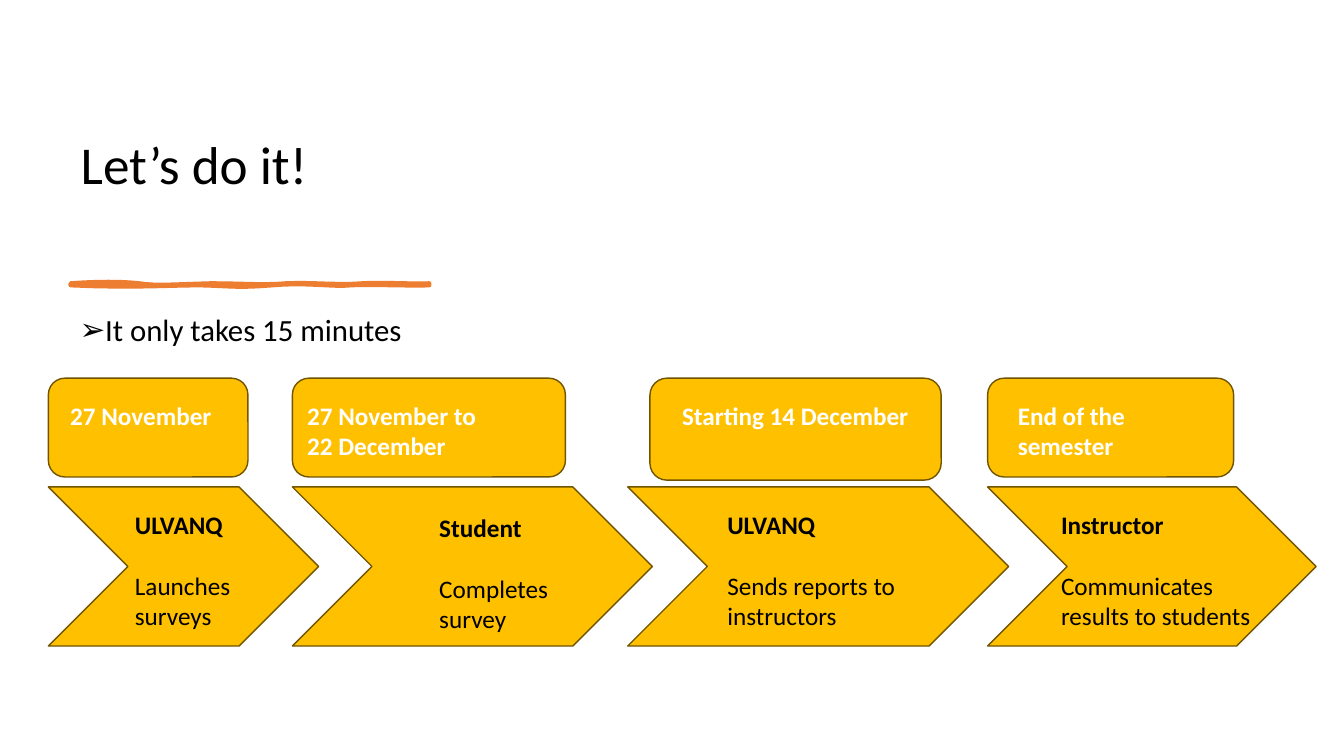
"""Build the survey timeline slide."""
from dataclasses import dataclass

from lxml.etree import SubElement
from pptx import Presentation
from pptx.dml.color import RGBColor
from pptx.enum.shapes import MSO_SHAPE
from pptx.enum.text import MSO_ANCHOR, MSO_AUTO_SIZE, PP_ALIGN
from pptx.oxml.ns import qn
from pptx.shapes.autoshape import Shape
from pptx.slide import Slide
from pptx.text.text import TextFrame, _Paragraph
from pptx.util import Cm, Pt

HUES = {"gold": "FFC000", "edge": "705400", "brush": "ED7D31",
        "ink": "000000", "white": "FFFFFF"}
FONT = "Calibri"
START = (1.78, 7.14)
CURVES = [
    (2.46, 7.09, 3.07, 7.09, 3.51, 7.14),
    (3.94, 7.21, 4.5, 7.16, 5.31, 7.14),
    (6.12, 7.14, 6.6, 7.19, 7.21, 7.14),
    (7.82, 7.11, 8.61, 7.19, 9.12, 7.14),
    (9.63, 7.11, 10.46, 7.16, 10.82, 7.14),
    (10.82, 7.16, 10.82, 7.19, 10.82, 7.19),
    (10.36, 7.21, 9.25, 7.16, 8.84, 7.19),
    (8.43, 7.24, 7.72, 7.11, 6.86, 7.19),
    (5.97, 7.26, 5.87, 7.21, 5.05, 7.19),
    (4.22, 7.19, 3.35, 7.26, 1.78, 7.19),
]


@dataclass
class Box:
    """Hold a box in centimetres."""
    left: float
    top: float
    width: float
    height: float

    def emu(self) -> tuple[Cm, Cm, Cm, Cm]:
        """Return the box as lengths."""
        return Cm(self.left), Cm(self.top), Cm(self.width), Cm(self.height)


@dataclass
class Stage:
    """Describe one step of the timeline."""
    date: str
    who: str
    task: str
    card: Box
    label: Box
    arrow: Box
    note: Box


STAGES = [
    Stage("27 November", "ULVANQ", "Launches\nsurveys",
          Box(1.22, 9.53, 5.03, 2.49), Box(1.52, 9.96, 4.67, 1.02),
          Box(1.22, 12.27, 6.81, 4.01), Box(3.15, 12.7, 4.06, 3.33)),
    Stage("27 November to\n22 December", "Student", "Completes\nsurvey",
          Box(7.37, 9.53, 6.88, 2.49), Box(7.49, 9.96, 6.4, 1.8),
          Box(7.37, 12.27, 9.07, 4.01), Box(10.82, 12.78, 5.56, 3.33)),
    Stage("Starting 14 December", "ULVANQ", "Sends reports to instructors",
          Box(16.38, 9.53, 7.34, 2.57), Box(16.94, 9.96, 6.45, 1.02),
          Box(15.82, 12.27, 9.6, 4.01), Box(18.08, 12.7, 6.15, 3.33)),
    Stage("End of the semester", "Instructor",
          "Communicates results to students",
          Box(24.89, 9.53, 6.2, 2.49), Box(25.4, 9.96, 5.46, 1.8),
          Box(24.89, 12.27, 8.28, 4.01), Box(26.49, 12.7, 5.61, 3.33)),
]


def tint(name: str) -> RGBColor:
    """Return a named colour."""
    return RGBColor.from_string(HUES[name])


def write(para: _Paragraph, text: str, size: float, hue: str = "ink",
          bold: bool = False) -> None:
    """Add text run by run, breaking at newlines."""
    for i, line in enumerate(text.split("\n")):
        if i:
            para.add_line_break()
        run = para.add_run()
        run.text = line
        run.font.name = FONT
        run.font.size = Pt(size)
        run.font.bold = bold
        run.font.color.rgb = tint(hue)


def paint(shape: Shape, fill: str, edge: str, width: float) -> None:
    """Set fill and line, and drop the shadow."""
    shape.shadow.inherit = False
    shape.fill.solid()
    shape.fill.fore_color.rgb = tint(fill)
    shape.line.color.rgb = tint(edge)
    shape.line.width = Pt(width)


def block(slide: Slide, kind: MSO_SHAPE, box: Box) -> None:
    """Draw one gold preset shape."""
    shape = slide.shapes.add_shape(kind, *box.emu())
    paint(shape, "gold", "edge", 1)


def frame(slide: Slide, box: Box) -> TextFrame:
    """Add a wrapping text box."""
    text = slide.shapes.add_textbox(*box.emu()).text_frame
    text.word_wrap = True
    return text


def holder(shape: Shape, box: Box, anchor: MSO_ANCHOR) -> _Paragraph:
    """Place and format a placeholder, and return its paragraph."""
    shape.left, shape.top, shape.width, shape.height = box.emu()
    text = shape.text_frame
    text.word_wrap = True
    text.auto_size = MSO_AUTO_SIZE.NONE
    text.vertical_anchor = anchor
    para = text.paragraphs[0]
    para.alignment = PP_ALIGN.LEFT
    para.line_spacing = 0.9
    para.space_before = Pt(0)
    return para


def brush(slide: Slide, steps: int = 8) -> None:
    """Draw the wavy rule under the title."""
    spots = []
    x, y = START
    for ax, ay, bx, by, cx, cy in CURVES:
        for i in range(1, steps + 1):
            t = i / steps
            u = 1 - t
            a, b, c, d = u ** 3, 3 * u * u * t, 3 * u * t * t, t ** 3
            spots.append((Cm(a * x + b * ax + c * bx + d * cx),
                          Cm(a * y + b * ay + c * by + d * cy)))
        x, y = cx, cy
    pen = slide.shapes.build_freeform(Cm(START[0]), Cm(START[1]))
    pen.add_line_segments(spots, close=True)
    shape = pen.convert_to_shape()
    paint(shape, "brush", "brush", 3)
    SubElement(shape.line._get_or_add_ln(), qn("a:round"))


def step(slide: Slide, stage: Stage) -> None:
    """Draw one stage with its date and its task."""
    block(slide, MSO_SHAPE.CHEVRON, stage.arrow)
    block(slide, MSO_SHAPE.ROUNDED_RECTANGLE, stage.card)
    note = frame(slide, stage.note)
    head = note.paragraphs[0]
    head.space_after = Pt(22)
    write(head, stage.who, 18, bold=True)
    write(note.add_paragraph(), stage.task, 18)
    label = frame(slide, stage.label)
    write(label.paragraphs[0], stage.date, 18, "white", True)


def main() -> None:
    """Build and save the slide."""
    deck = Presentation()
    deck.slide_width, deck.slide_height = Cm(33.87), Cm(19.05)
    slide = deck.slides.add_slide(deck.slide_layouts[1])
    title = holder(slide.shapes.title, Box(1.78, 1.78, 10.87, 3.28),
                   MSO_ANCHOR.BOTTOM)
    write(title, "Let’s do it!", 38)
    brush(slide)
    item = holder(slide.placeholders[1], Box(1.75, 7.8, 9.53, 9.47),
                  MSO_ANCHOR.TOP)
    item.space_after = Pt(6)
    props = item._p.get_or_add_pPr()
    props.set("marL", str(Cm(0.3)))
    props.set("indent", str(Cm(-0.97)))
    SubElement(props, qn("a:buChar"), char="➢")
    write(item, "It only takes 15 minutes", 22)
    for stage in STAGES:
        step(slide, stage)
    deck.save("out.pptx")


if __name__ == "__main__":
    main()
